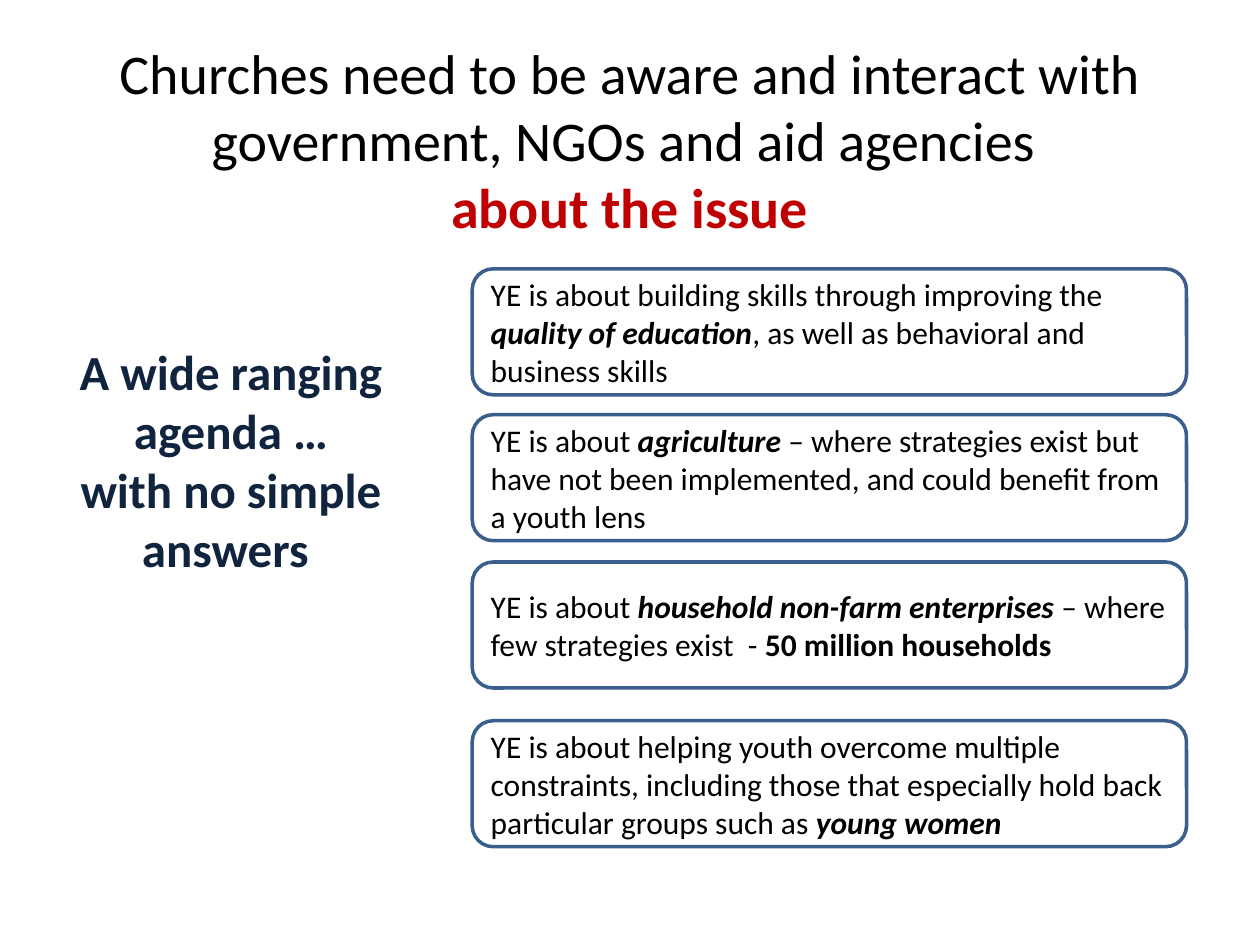
"""Build a slide on the youth employment agenda for churches."""
from pptx import Presentation
from pptx.dml.color import RGBColor as Rgb
from pptx.enum.shapes import MSO_SHAPE as Kind
from pptx.enum.text import MSO_ANCHOR as Anchor, PP_ALIGN as Align
from pptx.util import Cm, Pt

HUES = {"text": "000000", "stress": "C00000", "agenda": "10243E", "edge": "3A5F8C"}
TITLE = [
    [("Churches need to be aware and interact with government, NGOs and aid agencies ", "")],
    [("about the issue", "b")],
]
AGENDA = [
    [("A wide ranging ", "b")],
    [("agenda …", "b")],
    [("with no simple answers ", "b")],
]
CARDS = [
    (5.42, [("YE is about building skills through improving the ", ""),
            ("quality of education", "bi"),
            (", as well as behavioral and business skills", "")]),
    (8.36, [("YE is about ", ""), ("agriculture", "bi"),
            (" – where strategies exist but have not been implemented, "
             "and could benefit from a youth lens", "")]),
    (11.33, [("YE is about ", ""), ("household non-farm enterprises ", "bi"),
             ("– where few strategies exist  - ", ""),
             ("50 million households", "b")]),
    (14.53, [("YE is about helping youth overcome multiple constraints, including "
              "those that especially hold back particular groups such as ", ""),
             ("young women", "bi")]),
]
LEFT, WIDE, HIGH = 9.52, 14.4, 2.54


def color(name):
    return Rgb.from_string(HUES[name])


def write(shape, lines, size, hues, align, anchor):
    frame = shape.text_frame
    frame.word_wrap = True
    frame.vertical_anchor = anchor
    frame.text = "\n" * (len(lines) - 1)
    for para, line, hue in zip(frame.paragraphs, lines, hues):
        para.alignment = align
        for text, style in line:
            run = para.add_run()
            run.text = text
            font = run.font
            font.name, font.size = "Calibri", Pt(size)
            font.bold, font.italic = "b" in style, "i" in style
            font.color.rgb = color(hue)


def add_card(slide, top, line):
    card = slide.shapes.add_shape(
        Kind.ROUNDED_RECTANGLE, Cm(LEFT), Cm(top), Cm(WIDE), Cm(HIGH))
    card.shadow.inherit = False
    card.fill.background()
    card.line.color.rgb = color("edge")
    card.line.width = Pt(2)
    write(card, [line], 18, ["text"], Align.LEFT, Anchor.MIDDLE)


def main():
    deck = Presentation()
    deck.slide_width, deck.slide_height = Cm(25.4), Cm(19.05)
    slide = deck.slides.add_slide(deck.slide_layouts[6])
    for top, line in CARDS:
        add_card(slide, top, line)
    title = slide.shapes.add_textbox(Cm(0.85), Cm(1.22), Cm(23.7), Cm(3.18))
    write(title, TITLE, 32, ["text", "stress"], Align.CENTER, Anchor.MIDDLE)
    agenda = slide.shapes.add_textbox(Cm(1.27), Cm(6.77), Cm(6.77), Cm(4.98))
    write(agenda, AGENDA, 28, ["agenda"] * len(AGENDA), Align.CENTER, Anchor.TOP)
    deck.save("out.pptx")


if __name__ == "__main__":
    main()
